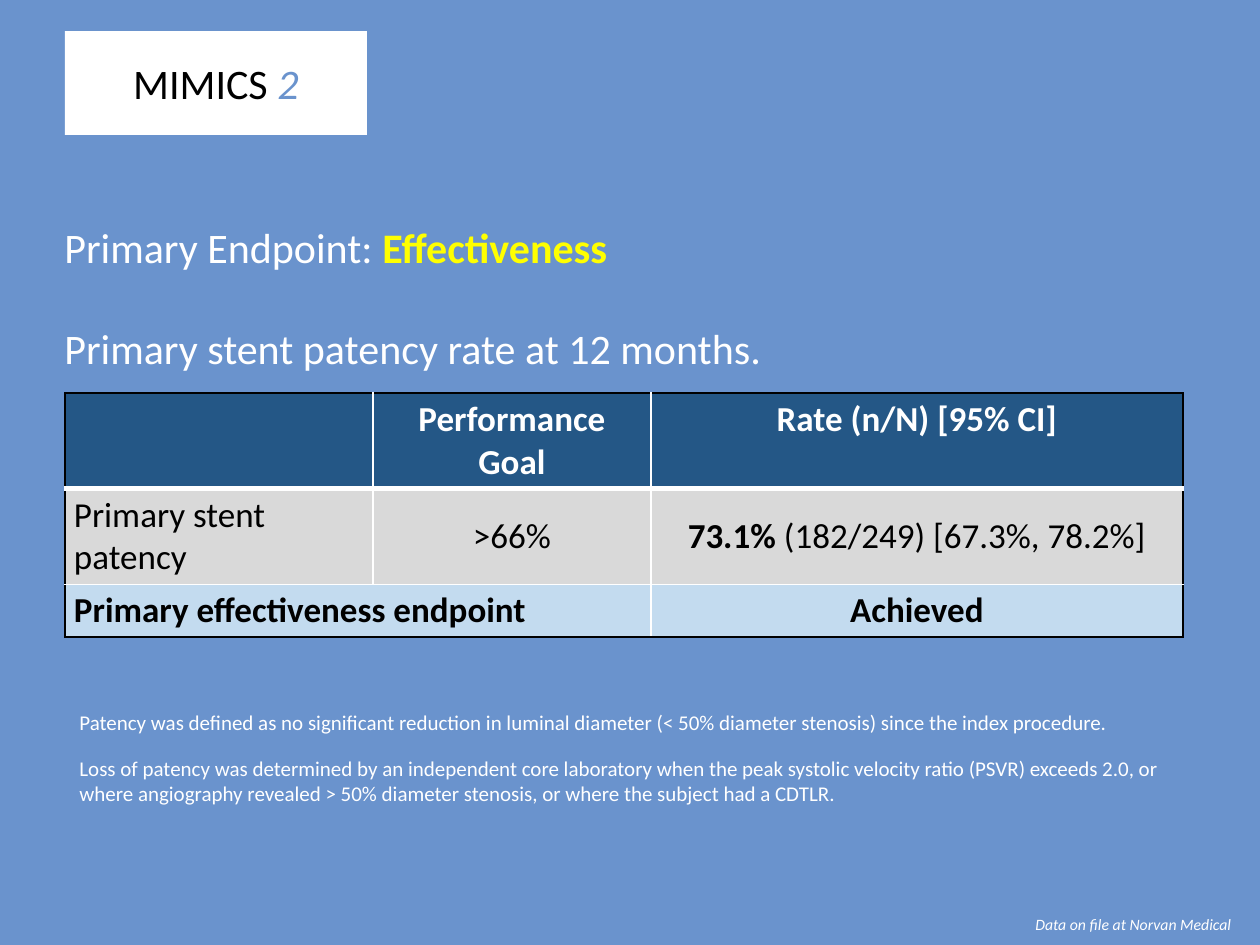
from dataclasses import dataclass

from lxml import etree
from pptx import Presentation
from pptx import util as u
from pptx.dml.color import RGBColor
from pptx.enum import shapes, text
from pptx.oxml import ns


@dataclass(frozen=True)
class Theme:
    """Colours, font and type sizes of the slide."""
    font: str = "Calibri"
    blue: str = "6A93CD"
    navy: str = "245786"
    grey: str = "D9D9D9"
    pale: str = "C3DBEF"
    white: str = "FFFFFF"
    black: str = "000000"
    yellow: str = "FFFF00"
    heading: int = 24
    cell: int = 20
    note: int = 12
    source: int = 9


T = Theme()
CENTER = text.PP_ALIGN.CENTER
MIDDLE = text.MSO_ANCHOR.MIDDLE


def px(n):
    """Turn pixels into EMU at 126 pixels to the inch."""
    return u.Emu(round(n * 914400 / 126))


def add_text(tf, runs, size, color=T.white, align=None, before=None, spacing=None, new=False):
    """Write one paragraph of (text, format) runs and return it."""
    p = tf.add_paragraph() if new else tf.paragraphs[0]
    p.alignment, p.space_before, p.line_spacing = align, before, spacing
    for words, fmt in runs:
        r = p.add_run()
        r.text = words
        r.font.name, r.font.size = T.font, u.Pt(size)
        r.font.bold, r.font.italic = fmt.get("bold", False), fmt.get("italic", False)
        r.font.color.rgb = RGBColor.from_string(fmt.get("color", color))
    return p


def add_box(s, x, y, w, h, wrap=True, grow=True):
    """Add an empty text box and return its text frame."""
    tf = s.shapes.add_textbox(px(x), px(y), px(w), px(h)).text_frame
    tf.word_wrap = wrap
    tf.auto_size = text.MSO_AUTO_SIZE.SHAPE_TO_FIT_TEXT if grow else text.MSO_AUTO_SIZE.NONE
    return tf


def add_badge(s, x, y, w, h):
    """Draw the study name on a white panel."""
    sp = s.shapes.add_shape(shapes.MSO_SHAPE.RECTANGLE, px(x), px(y), px(w), px(h))
    sp.shadow.inherit = False
    sp.fill.solid()
    sp.fill.fore_color.rgb = RGBColor.from_string(T.white)
    sp.line.fill.background()
    sp.text_frame.vertical_anchor = MIDDLE
    runs = [("MIMICS", {}), (" 2", {"color": T.blue, "italic": True})]
    add_text(sp.text_frame, runs, T.heading, T.black, CENTER)


def add_headings(s, x, y, w, h):
    """Write the endpoint heading and the measure below it."""
    runs = [("Primary Endpoint: ", {}), ("Effectiveness", {"color": T.yellow, "bold": True})]
    add_text(add_box(s, x, y, 576, h, wrap=False), runs, T.heading)
    add_text(add_box(s, x, y + 101, w, h), [("Primary stent patency rate at 12 months.", {})], T.heading)


def set_border(cell, side, color, width):
    """Draw one side of a cell."""
    ln = etree.SubElement(cell._tc.get_or_add_tcPr(), ns.qn(f"a:ln{side}"), w=str(u.Pt(width)))
    fill = etree.SubElement(ln, ns.qn("a:solidFill"))
    etree.SubElement(fill, ns.qn("a:srgbClr"), val=color)


def add_results(s, x, y, w, h):
    """Build the results table with a black outline and white inner rules."""
    bold = {"bold": True}
    rows = [
        (68, T.navy, T.white, [[], [("Performance Goal", bold)], [("Rate (n/N) [95% CI]", bold)]]),
        (69, T.grey, T.black, [[("Primary stent patency", {})], [(">66%", {})],
                               [("73.1% ", bold), ("(182/249) [67.3%, 78.2%]", {})]]),
        (39, T.pale, T.black, [[("Primary effectiveness endpoint", bold)], [], [("Achieved", bold)]]),
    ]
    frame = s.shapes.add_table(len(rows), 3, px(x), px(y), px(w), px(h))
    table = frame.table
    for col, width in zip(table.columns, (308, 278, w - 586)):
        col.width = px(width)
    last_row, last_col = len(rows) - 1, 2
    for i, (height, fill, color, cells) in enumerate(rows):
        table.rows[i].height = px(height)
        for j, runs in enumerate(cells):
            cell = table.cell(i, j)
            cell.margin_left = cell.margin_right = px(9)
            cell.margin_top = cell.margin_bottom = px(5)
            outer = {"L": j == 0, "R": j == last_col, "T": i == 0, "B": i == last_row}
            for side, edge in outer.items():
                width = 3 if i == 0 and side == "B" else 1
                set_border(cell, side, T.black if edge else T.white, width)
            cell.fill.solid()
            cell.fill.fore_color.rgb = RGBColor.from_string(fill)
            if i == 1 or (i, j) == (last_row, last_col):
                cell.vertical_anchor = MIDDLE
            if runs:
                add_text(cell.text_frame, runs, T.cell, color, CENTER if j else None)
    table.cell(last_row, 0).merge(table.cell(last_row, 1))
    frame.height = px(h)


def add_notes(s, x, y, w, h):
    """Write the definitions of patency and its loss."""
    tf = add_box(s, x, y, w, h)
    add_text(tf, [("Patency was defined as no significant reduction in luminal diameter "
                   "(< 50% diameter stenosis) since the index procedure.", {})], T.note)
    add_text(tf, [("Loss of patency was determined by an independent core laboratory when the peak "
                   "systolic velocity ratio (PSVR) exceeds 2.0, or where angiography revealed > 50% "
                   "diameter stenosis, or where the subject had a CDTLR.", {})],
             T.note, before=u.Pt(12), new=True)


def add_source(s, x, y, w, h):
    """Write the data source line."""
    tf = add_box(s, x, y, w, h, grow=False)
    add_text(tf, [("Data on file at Norvan Medical", {"italic": True})], T.source, spacing=0.9)


def main():
    """Build and save the slide."""
    prs = Presentation()
    prs.slide_width, prs.slide_height = px(1260), px(945)
    s = prs.slides.add_slide(prs.slide_layouts[6])
    s.background.fill.solid()
    s.background.fill.fore_color.rgb = RGBColor.from_string(T.blue)
    add_results(s, 65, 393, 1118, 238)
    add_headings(s, 52, 215, 1166, 63)
    add_notes(s, 67, 703, 1118, 111)
    add_source(s, 1023, 911, 237, 23)
    add_badge(s, 65, 31, 302, 104)
    prs.save("out.pptx")


if __name__ == "__main__":
    main()
